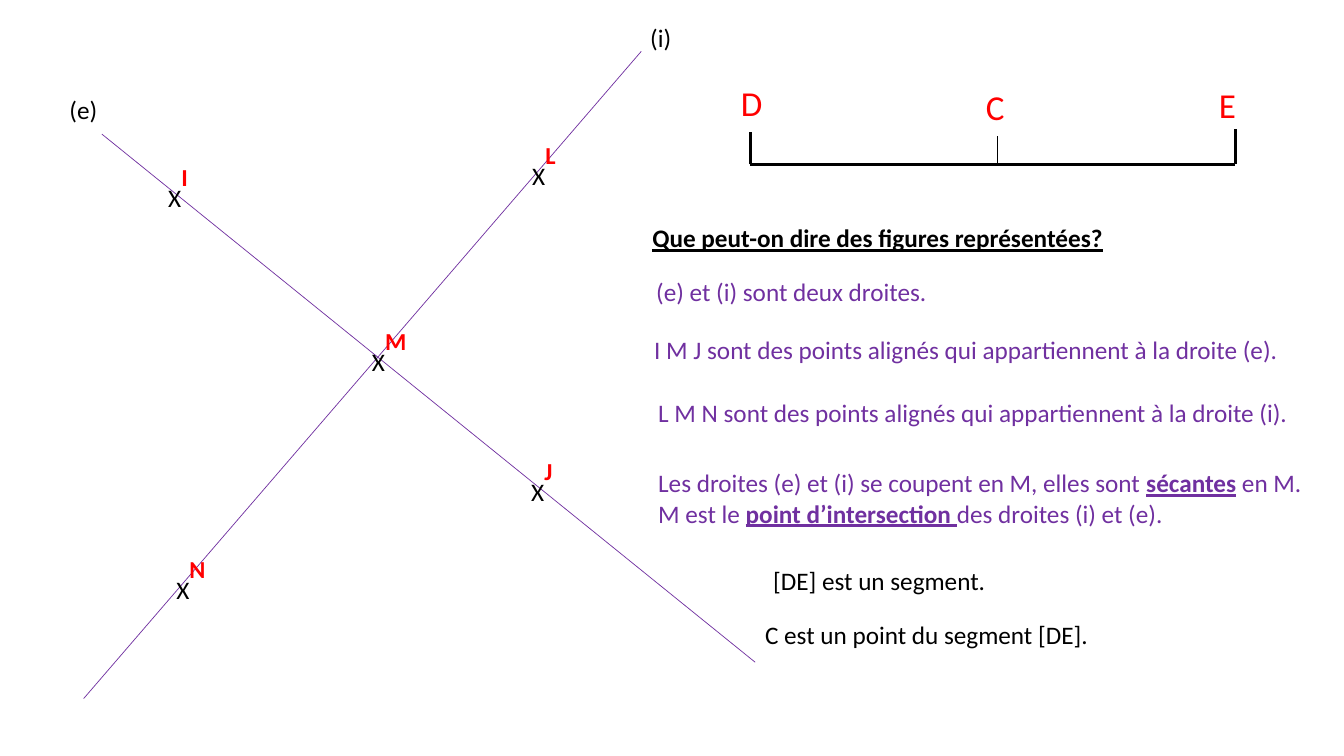
from lxml import etree
from pptx import Presentation
from pptx.dml.color import RGBColor
from pptx.enum.shapes import MSO_CONNECTOR
from pptx.enum.text import MSO_ANCHOR, MSO_AUTO_SIZE, PP_ALIGN
from pptx.oxml.ns import qn
from pptx.util import Inches, Pt

STRAIGHT = MSO_CONNECTOR.STRAIGHT
TOP = MSO_ANCHOR.TOP
LEFT = PP_ALIGN.LEFT
FIT_SHAPE = MSO_AUTO_SIZE.SHAPE_TO_FIT_TEXT
NO_FIT = MSO_AUTO_SIZE.NONE

COLORS = {"black": "000000", "red": "FF0000", "purple": "7030A0"}
FONT = "Calibri"

# Points on the two lines: name, left, top, width
POINTS = [
    ("L", 5.18, 1.34, 0.45),
    ("M", 3.59, 3.19, 0.58),
    ("N", 1.65, 5.45, 0.52),
    ("I", 1.57, 1.56, 0.41),
    ("J", 5.17, 4.48, 0.43),
]

# Segment ends and middle: name, label left, label top, label width,
# tick x, tick top, tick width
SEGMENT_Y = 1.63
SEGMENT_POINTS = [
    ("D", 7.25, 0.76, 0.42, 7.44, 1.31, 2.25),
    ("C", 9.68, 0.80, 0.39, 9.89, 1.35, 0.5),
    ("E", 11.99, 0.78, 0.37, 12.25, 1.28, 2.25),
]

# Single-line texts: text, left, top, width, colour
TEXTS = [
    ("(e)", 0.59, 0.89, 0.48, "black"),
    ("(i)", 6.35, 0.17, 0.41, "black"),
    ("(e) et (i) sont deux droites.", 6.41, 2.69, 6.92, "purple"),
    ("I M J sont des points alignés qui appartiennent à la droite (e).",
     6.39, 3.27, 6.47, "purple"),
    ("L M N sont des points alignés qui appartiennent à la droite (i).",
     6.43, 3.89, 6.52, "purple"),
    ("[DE] est un segment.", 7.57, 5.56, 2.33, "black"),
    ("C est un point du segment [DE].", 7.49, 6.09, 3.44, "black"),
]

# Conclusion: each paragraph is a list of (text, is key term)
CONCLUSION = [
    [("Les droites (e) et (i) se coupent en M, elles sont ", False),
     ("sécantes", True), (" en M.", False)],
    [("M est le ", False), ("point d’intersection ", True),
     ("des droites (i) et (e).", False)],
]


def format_run(r, color, size=18, bold=False, underline=False):
    r.font.name = FONT
    r.font.size = Pt(size)
    r.font.bold = bold
    r.font.underline = underline
    r.font.color.rgb = RGBColor.from_string(COLORS[color])


def add_line(shapes, start, end, color, width):
    line = shapes.add_connector(STRAIGHT, *map(Inches, start + end))
    line.line.color.rgb = RGBColor.from_string(COLORS[color])
    line.line.width = Pt(width)
    etree.SubElement(line._element.spPr, qn("a:effectLst"))


def add_box(shapes, left, top, width, height, wrap=False):
    sp = shapes.add_textbox(*map(Inches, (left, top, width, height)))
    tf = sp.text_frame
    tf.word_wrap = wrap
    tf.auto_size = FIT_SHAPE
    return tf


def add_text(shapes, text, left, top, width, color, height=0.4, size=18):
    # Boxes much wider than their text must wrap to stay left-aligned
    tf = add_box(shapes, left, top, width, height, wrap=width > 6.9)
    tf.text = text
    format_run(tf.paragraphs[0].runs[0], color, size)


def add_point(shapes, name, left, top, width):
    p = add_box(shapes, left, top, width, 0.61).paragraphs[0]
    cross, label = p.add_run(), p.add_run()
    cross.text, label.text = "X", name
    format_run(cross, "black")
    format_run(label, "red", 30, bold=True)
    label.font._element.set("baseline", "50000")


def add_segment(shapes):
    group = shapes.add_group_shape().shapes
    for name, left, top, width, x, tick_top, weight in SEGMENT_POINTS:
        add_line(group, (x, SEGMENT_Y), (x, tick_top), "black", weight)
        add_text(group, name, left, top, width, "red", 0.52, 25)
    add_line(group, (7.44, SEGMENT_Y), (12.25, SEGMENT_Y), "black", 2.25)


def add_conclusion(shapes):
    tf = add_box(shapes, 6.43, 4.59, 6.66, 0.71)
    for i, parts in enumerate(CONCLUSION):
        p = tf.add_paragraph() if i else tf.paragraphs[0]
        for text, is_key in parts:
            r = p.add_run()
            r.text = text
            format_run(r, "purple", bold=is_key, underline=is_key)


def set_title(title, text):
    title.left, title.top = Inches(6.37), Inches(2.16)
    title.width, title.height = Inches(6.96), Inches(0.4)
    tf = title.text_frame
    tf.text = text
    tf.word_wrap = True
    tf.auto_size = NO_FIT
    tf.vertical_anchor = TOP
    p = tf.paragraphs[0]
    p.alignment = LEFT
    format_run(p.runs[0], "black", bold=True, underline=True)


def main():
    prs = Presentation()
    prs.slide_width, prs.slide_height = Inches(13.33), Inches(7.5)
    slide = prs.slides.add_slide(prs.slide_layouts[5])
    shapes = slide.shapes

    # Intersecting lines (i) and (e) with their points
    add_line(shapes, (6.36, 0.51), (0.83, 6.93), "purple", 0.5)
    add_line(shapes, (1.01, 1.33), (7.49, 6.57), "purple", 0.5)
    for point in POINTS:
        add_point(shapes, *point)

    # Segment [DE]
    add_segment(shapes)

    # Question and answers
    set_title(shapes.title, "Que peut-on dire des figures représentées?")
    for text in TEXTS:
        add_text(shapes, *text)
    add_conclusion(shapes)

    prs.save("out.pptx")


if __name__ == "__main__":
    main()
